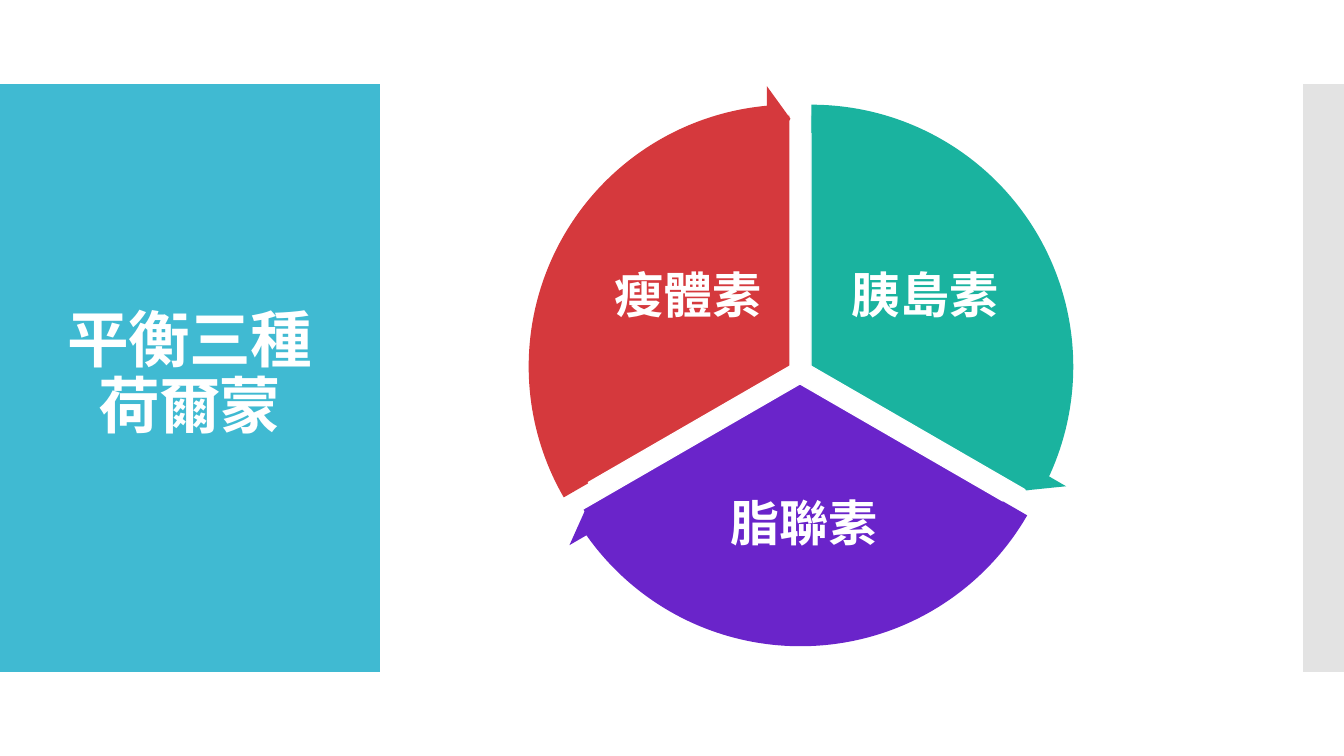
from lxml.etree import SubElement
from pptx import Presentation
from pptx.dml.color import RGBColor
from pptx.enum.shapes import MSO_SHAPE as Shape
from pptx.enum.text import MSO_ANCHOR as Anchor, PP_ALIGN as Align
from pptx.oxml.ns import qn
from pptx.util import Emu, Pt

EMU_PER_PX = 914400 / 100.8
UNITS_PER_DEGREE = 0.6
FONT = "Noto Sans CJK SC"
WHITE = RGBColor(0xFF, 0xFF, 0xFF)
SKY = RGBColor(0x40, 0xBA, 0xD2)
GREY = RGBColor(0xC8, 0xC8, 0xC8)
GREEN = RGBColor(0x1A, 0xB3, 0x9F)
PURPLE = RGBColor(0x6A, 0x24, 0xCA)
RED = RGBColor(0xD5, 0x39, 0x3D)

PIE_SIZE, ARROW_SIZE = 502, 563
ARROW_BAND, ARROW_TIP, ARROW_REACH = 0.05, 3.28, 0.06

# colour, start degree, end degree, offset, label, label box, left inset
SECTORS = [
    (GREEN, 270, 30, (21, 0), "胰島素", (317, 138, 179, 149), 25),
    (PURPLE, 30, 150, (10, 18), "脂聯素", (161, 375, 269, 131), 5),
    (RED, 150, 270, (0, 0), "瘦體素", (90, 138, 179, 149), 5),
]


def px(length):
    """Turn pixels into EMU."""
    return Emu(round(length * EMU_PER_PX))


def add_filled(page, kind, box, color, adjustments=()):
    """Add a flat preset shape without outline."""
    shape = page.shapes.add_shape(kind, *map(px, box))
    shape.shadow.inherit = False
    shape.fill.solid()
    shape.fill.fore_color.rgb = color
    shape.line.fill.background()
    for index, value in enumerate(adjustments):
        shape.adjustments[index] = value
    return shape


def add_label(page, box, text, size, insets, after=0, tracking=0):
    """Add bold white text centred in a box."""
    frame = page.shapes.add_textbox(*map(px, box)).text_frame
    left, top, right, bottom = map(px, insets)
    layout = {"word_wrap": True, "vertical_anchor": Anchor.MIDDLE,
              "margin_left": left, "margin_top": top,
              "margin_right": right, "margin_bottom": bottom}
    for name, value in layout.items():
        setattr(frame, name, value)
    para = frame.paragraphs[0]
    para.text = text
    spacing = {"alignment": Align.CENTER, "line_spacing": 0.9,
               "space_after": Pt(after)}
    for name, value in spacing.items():
        setattr(para, name, value)
    for span in para.runs:
        for name, value in {"size": Pt(size), "bold": True, "name": FONT}.items():
            setattr(span.font, name, value)
        span.font.color.rgb = WHITE
        props = span.font._element
        SubElement(props, qn("a:ea")).set("typeface", FONT)
        props.set("spc", str(tracking))


def add_title_panel(page, box):
    """Draw the coloured panel with the slide title."""
    left, top, width, height = box
    add_filled(page, Shape.RECTANGLE, box, SKY)
    add_label(page, (left, top + 38, width, height - 81),
              "平衡三種\v荷爾蒙", 44, (10, 5, 10, 5), tracking=-60)


def add_side_strip(page, box):
    """Draw the half-transparent strip at the right edge."""
    strip = add_filled(page, Shape.RECTANGLE, box, GREY)
    color = strip._element.spPr.find(qn("a:solidFill"))[0]
    SubElement(color, qn("a:alpha")).set("val", "50000")


def add_hormone_wheel(page, box):
    """Draw the three sectors, their labels and the arrows around them."""
    left, top = box[:2]
    rim = (ARROW_SIZE - PIE_SIZE) // 2
    for color, start, end, (dx, dy), label, area, inset in SECTORS:
        angles = [start * UNITS_PER_DEGREE, end * UNITS_PER_DEGREE]
        pie_box = (left + dx + rim, top + dy + rim, PIE_SIZE, PIE_SIZE)
        pie = add_filled(page, Shape.PIE, pie_box, color, angles)
        pie.line.color.rgb = WHITE
        pie.line.width = Pt(0.85)
        x, y, width, height = area
        add_label(page, (left + x, top + y, width, height), label, 35,
                  (inset, 5, 5, 5), after=12)
    for color, start, end, (dx, dy), *_ in SECTORS:
        arrow_box = (left + dx, top + dy, ARROW_SIZE, ARROW_SIZE)
        add_filled(page, Shape.CIRCULAR_ARROW, arrow_box, color, [
            ARROW_BAND, ARROW_TIP, end * UNITS_PER_DEGREE - ARROW_TIP,
            start * UNITS_PER_DEGREE, ARROW_REACH])


def main():
    """Build the slide and save it."""
    deck = Presentation()
    deck.slide_width, deck.slide_height = px(1344), px(756)
    page = deck.slides.add_slide(deck.slide_layouts[6])
    add_title_panel(page, (0, 84, 380, 588))
    add_side_strip(page, (1303, 84, 41, 588))
    add_hormone_wheel(page, (509, 85, 584, 581))
    deck.save("out.pptx")


if __name__ == "__main__":
    main()
